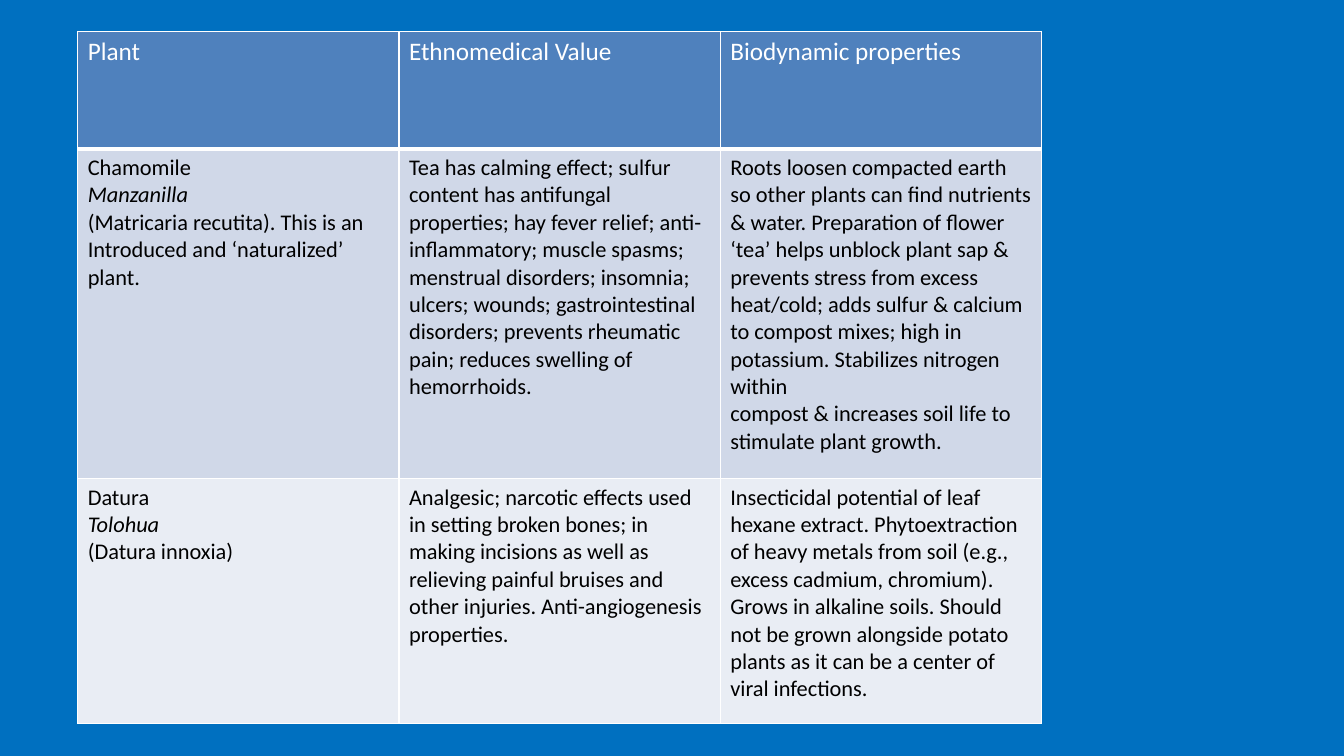
from dataclasses import dataclass

from lxml import etree
from pptx import Presentation
from pptx.dml.color import RGBColor
from pptx.oxml.ns import qn
from pptx.table import _Cell
from pptx.text.text import _Paragraph
from pptx.util import Emu, Pt

EMU_PER_PX = 9525
EMU_PER_POINT = 12700

BACKGROUND_BLUE = RGBColor(0x00, 0x70, 0xC0)
HEADER_BLUE = RGBColor(0x4F, 0x81, 0xBD)
BAND_BLUE = RGBColor(0xD0, 0xD8, 0xE8)
BAND_PALE = RGBColor(0xE9, 0xED, 0xF4)
WHITE = RGBColor(0xFF, 0xFF, 0xFF)
BLACK = RGBColor(0x00, 0x00, 0x00)

FONT = "Calibri"
TABLE_LEFT, TABLE_TOP = 74, 30
COLUMN_WIDTH = 306
LOCAL_NAME_LINE = 1


@dataclass(frozen=True)
class TableRow:
    height: int
    fill: RGBColor
    cells: tuple[tuple[str, ...], ...]
    color: RGBColor = BLACK
    size: int = 16
    bottom_border: int = 1


ROWS = (
    TableRow(
        112,
        HEADER_BLUE,
        (("Plant",), ("Ethnomedical Value",), ("Biodynamic properties",)),
        color=WHITE,
        size=18,
        bottom_border=3,
    ),
    TableRow(
        314,
        BAND_BLUE,
        (
            (
                "Chamomile",
                "Manzanilla",
                "(Matricaria recutita). This is an",
                "Introduced and ‘naturalized’ plant.",
            ),
            (
                "Tea has calming effect; sulfur content has antifungal properties; "
                "hay fever relief; anti-inflammatory; muscle spasms; menstrual "
                "disorders; insomnia; ulcers; wounds; gastrointestinal disorders; "
                "prevents rheumatic pain; reduces swelling of hemorrhoids.",
            ),
            (
                "Roots loosen compacted earth so other plants can find nutrients "
                "& water. Preparation of flower ‘tea’ helps unblock plant sap & "
                "prevents stress from excess heat/cold; adds sulfur & calcium to "
                "compost mixes; high in potassium. Stabilizes nitrogen within",
                "compost & increases soil life to stimulate plant growth.",
            ),
        ),
    ),
    TableRow(
        233,
        BAND_PALE,
        (
            ("Datura", "Tolohua", "(Datura innoxia)"),
            (
                "Analgesic; narcotic effects used in setting broken bones; in "
                "making incisions as well as relieving painful bruises and other "
                "injuries. Anti-angiogenesis properties.",
            ),
            (
                "Insecticidal potential of leaf hexane extract. Phytoextraction "
                "of heavy metals from soil (e.g., excess cadmium, chromium). "
                "Grows in alkaline soils. Should not be grown alongside potato "
                "plants as it can be a center of viral infections.",
            ),
        ),
    ),
)


def px(length: int) -> Emu:
    return Emu(length * EMU_PER_PX)


def write_text(
    paragraph: _Paragraph, text: str, *, size: int, color: RGBColor, italic: bool = False
) -> None:
    run = paragraph.add_run()
    run.text = text
    run.font.name = FONT
    run.font.size = Pt(size)
    run.font.bold = False
    run.font.italic = italic
    run.font.color.rgb = color


def add_borders(cell: _Cell, bottom: int) -> None:
    """Draw white borders; call before filling, as the schema puts lines first."""
    properties = cell._tc.get_or_add_tcPr()
    for side, points in (("L", 1), ("R", 1), ("T", 1), ("B", bottom)):
        line = etree.SubElement(
            properties, qn(f"a:ln{side}"), w=str(points * EMU_PER_POINT)
        )
        fill = etree.SubElement(line, qn("a:solidFill"))
        etree.SubElement(fill, qn("a:srgbClr"), val=str(WHITE))


def fill_cell(cell: _Cell, lines: tuple[str, ...], row: TableRow, names_plant: bool) -> None:
    add_borders(cell, row.bottom_border)
    cell.fill.solid()
    cell.fill.fore_color.rgb = row.fill
    frame = cell.text_frame
    for index, text in enumerate(lines):
        paragraph = frame.add_paragraph() if index else frame.paragraphs[0]
        write_text(
            paragraph,
            text,
            size=row.size,
            color=row.color,
            italic=names_plant and index == LOCAL_NAME_LINE,
        )


def main() -> None:
    presentation = Presentation()
    presentation.slide_width = px(1280)
    presentation.slide_height = px(720)
    slide = presentation.slides.add_slide(presentation.slide_layouts[6])
    slide.background.fill.solid()
    slide.background.fill.fore_color.rgb = BACKGROUND_BLUE

    column_count = len(ROWS[0].cells)
    table = slide.shapes.add_table(
        len(ROWS),
        column_count,
        px(TABLE_LEFT),
        px(TABLE_TOP),
        px(column_count * COLUMN_WIDTH),
        px(sum(row.height for row in ROWS)),
    ).table
    for column in table.columns:
        column.width = px(COLUMN_WIDTH)
    for row_index, row in enumerate(ROWS):
        table.rows[row_index].height = px(row.height)
        for column_index, lines in enumerate(row.cells):
            cell = table.cell(row_index, column_index)
            fill_cell(cell, lines, row, names_plant=column_index == 0)

    presentation.save("out.pptx")


if __name__ == "__main__":
    main()
